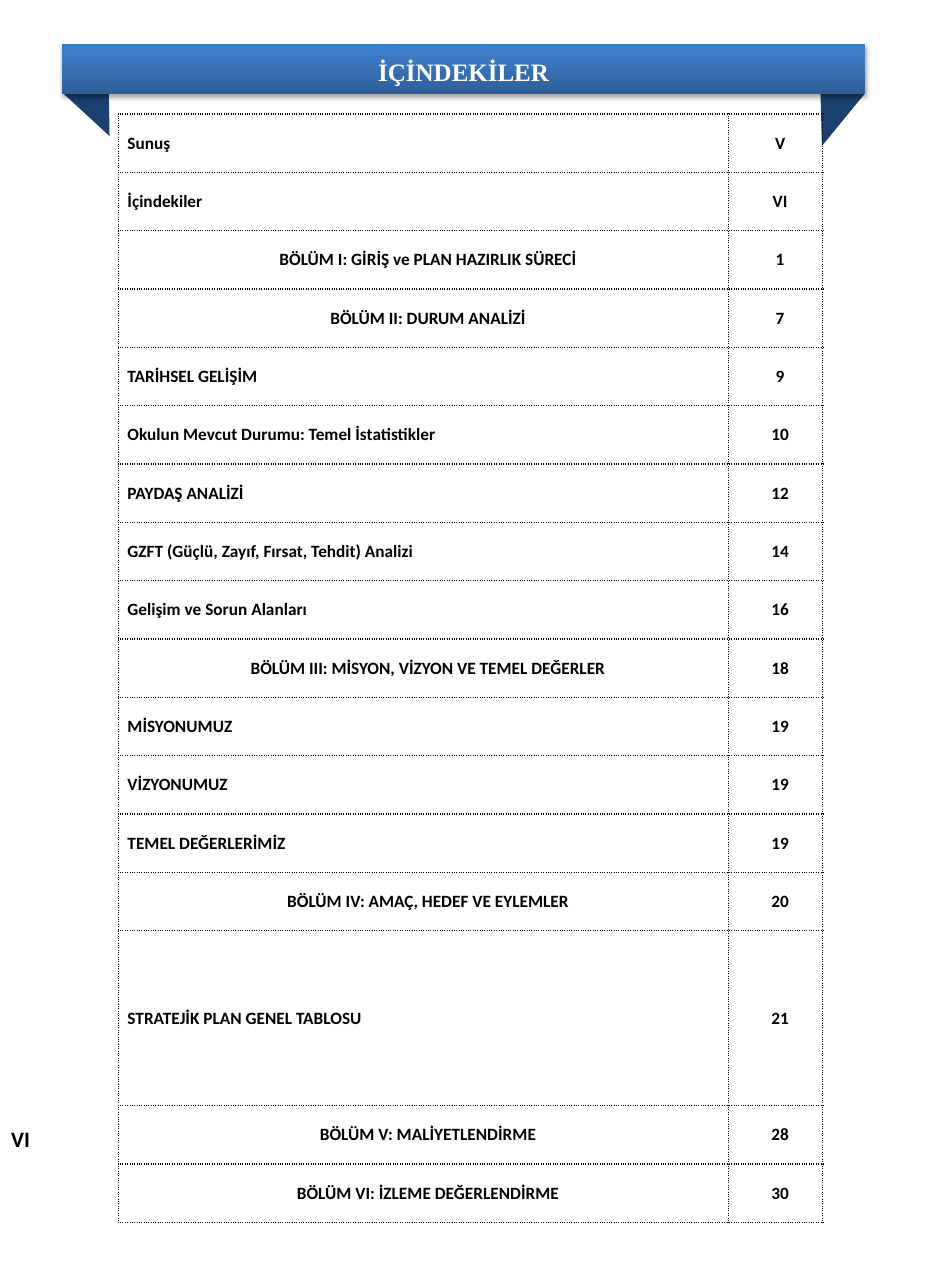
import pptx
import pptx.dml.color
import pptx.enum.shapes
import pptx.enum.text
import pptx.oxml
import pptx.oxml.ns
import pptx.util

Inches = pptx.util.Inches
Pt = pptx.util.Pt
RGBColor = pptx.dml.color.RGBColor
ALIGN = pptx.enum.text.PP_ALIGN
MIDDLE = pptx.enum.text.MSO_ANCHOR.MIDDLE

BLACK = RGBColor(0x00, 0x00, 0x00)
WHITE = RGBColor(0xFF, 0xFF, 0xFF)
FOLD_BLUE = RGBColor(0x1B, 0x41, 0x6F)
BANNER_STOPS = (
    (0, RGBColor(0x2F, 0x5F, 0x99)),
    (80, RGBColor(0x3D, 0x7C, 0xC7)),
    (100, RGBColor(0x3A, 0x7C, 0xCB)),
)

TABLE_HEIGHT = 9.83
TALL_ROW_UNITS = 3
TALL_ENTRY = "STRATEJİK PLAN GENEL TABLOSU"
ENTRIES = (
    ("Sunuş", "V"),
    ("İçindekiler", "VI"),
    ("BÖLÜM I: GİRİŞ ve PLAN HAZIRLIK SÜRECİ", "1"),
    ("BÖLÜM II: DURUM ANALİZİ", "7"),
    ("TARİHSEL GELİŞİM", "9"),
    ("Okulun Mevcut Durumu: Temel İstatistikler", "10"),
    ("PAYDAŞ ANALİZİ", "12"),
    ("GZFT (Güçlü, Zayıf, Fırsat, Tehdit) Analizi", "14"),
    ("Gelişim ve Sorun Alanları", "16"),
    ("BÖLÜM III: MİSYON, VİZYON VE TEMEL DEĞERLER", "18"),
    ("MİSYONUMUZ", "19"),
    ("VİZYONUMUZ", "19"),
    ("TEMEL DEĞERLERİMİZ", "19"),
    ("BÖLÜM IV: AMAÇ, HEDEF VE EYLEMLER", "20"),
    (TALL_ENTRY, "21"),
    ("BÖLÜM V: MALİYETLENDİRME", "28"),
    ("BÖLÜM VI: İZLEME DEĞERLENDİRME", "30"),
)


def drawing_xml(tag, attributes, content):
    namespace = pptx.oxml.ns.nsdecls("a")
    return pptx.oxml.parse_xml(f"<a:{tag} {namespace} {attributes}>{content}</a:{tag}>")


class ContentsPage:
    def __init__(self, deck):
        self.body_font = "Calibri"
        self.title_font = "Times New Roman"
        self.page = deck.slides.add_slide(deck.slide_layouts[5])

    def set_text(self, frame, text, size, font, color=BLACK, align=ALIGN.LEFT):
        para = frame.paragraphs[0]
        para.text = text
        para.alignment = align
        para.font.name = font
        para.font.size = Pt(size)
        para.font.bold = True
        para.font.color.rgb = color
        return para

    def fold(self, left, top, width, height, rotation):
        stripe = self.page.shapes.add_shape(
            pptx.enum.shapes.MSO_SHAPE.DIAGONAL_STRIPE,
            Inches(left), Inches(top), Inches(width), Inches(height))
        stripe.adjustments[0] = 0
        stripe.rotation = rotation
        stripe.shadow.inherit = False
        stripe.fill.solid()
        stripe.fill.fore_color.rgb = FOLD_BLUE
        stripe.line.fill.background()

    def banner(self, text, left, top, width, height):
        title = self.page.shapes.title
        title.left, title.top = Inches(left), Inches(top)
        title.width, title.height = Inches(width), Inches(height)
        stops = "".join(
            f'<a:gs pos="{percent * 1000}"><a:srgbClr val="{color}"/></a:gs>'
            for percent, color in BANNER_STOPS)
        shadow = (
            f'<a:outerShdw blurRad="{Pt(3.1)}" dist="{Pt(1.8)}" dir="5400000" rotWithShape="0">'
            '<a:srgbClr val="000000"><a:alpha val="35000"/></a:srgbClr></a:outerShdw>')
        properties = title._element.spPr
        properties.append(drawing_xml("prstGeom", 'prst="rect"', "<a:avLst/>"))
        properties.append(drawing_xml(
            "gradFill", 'rotWithShape="1"',
            f'<a:gsLst>{stops}</a:gsLst><a:lin ang="16200000" scaled="0"/>'))
        properties.append(drawing_xml("effectLst", "", shadow))
        frame = title.text_frame
        frame.auto_size = pptx.enum.text.MSO_AUTO_SIZE.NONE
        frame.vertical_anchor = MIDDLE
        para = self.set_text(frame, text, 16, self.title_font, WHITE, ALIGN.CENTER)
        para.line_spacing = 1.15
        para.space_before = Pt(0)
        para.space_after = Pt(10)
        self.page.shapes._spTree.append(title._element)

    def label(self, text, left, top, width, height):
        box = self.page.shapes.add_textbox(
            Inches(left), Inches(top), Inches(width), Inches(height))
        box.text_frame.word_wrap = True
        self.set_text(box.text_frame, text, 14, self.body_font)

    def cell(self, cell, text, align):
        properties = cell._tc.get_or_add_tcPr()
        for side in ("lnL", "lnR", "lnT", "lnB"):
            properties.append(drawing_xml(
                side, f'w="{Pt(1)}"',
                f'<a:solidFill><a:srgbClr val="{BLACK}"/></a:solidFill>'
                '<a:prstDash val="sysDot"/>'))
        cell.fill.background()
        cell.margin_left = Inches(0.08)
        cell.margin_right = cell.margin_top = cell.margin_bottom = 0
        cell.vertical_anchor = MIDDLE
        self.set_text(cell.text_frame, text, 11, self.body_font, align=align)

    def contents(self, left, top, widths):
        table = self.page.shapes.add_table(
            len(ENTRIES), len(widths), Inches(left), Inches(top),
            Inches(sum(widths)), Inches(TABLE_HEIGHT)).table
        table.first_row = False
        table.horz_banding = False
        for column, width in zip(table.columns, widths):
            column.width = Inches(width)
        unit = TABLE_HEIGHT / (len(ENTRIES) - 1 + TALL_ROW_UNITS)
        for index, (heading, number) in enumerate(ENTRIES):
            units = TALL_ROW_UNITS if heading == TALL_ENTRY else 1
            table.rows[index].height = Inches(unit * units)
            align = ALIGN.CENTER if heading.startswith("BÖLÜM") else ALIGN.LEFT
            self.cell(table.cell(index, 0), heading, align)
            self.cell(table.cell(index, 1), number, ALIGN.CENTER)


def main():
    deck = pptx.Presentation()
    deck.slide_width = Inches(8.27)
    deck.slide_height = Inches(11.42)
    page = ContentsPage(deck)
    page.fold(0.67, 0.52, 0.59, 0.56, 312.6)
    page.fold(6.98, 0.65, 0.59, 0.51, 129.3)
    page.banner("İÇİNDEKİLER", 0.55, 0.39, 7.12, 0.44)
    page.label("VI", 0, 9.93, 0.51, 0.34)
    page.contents(1.05, 1.01, (5.41, 0.83))
    deck.save("out.pptx")


if __name__ == "__main__":
    main()
